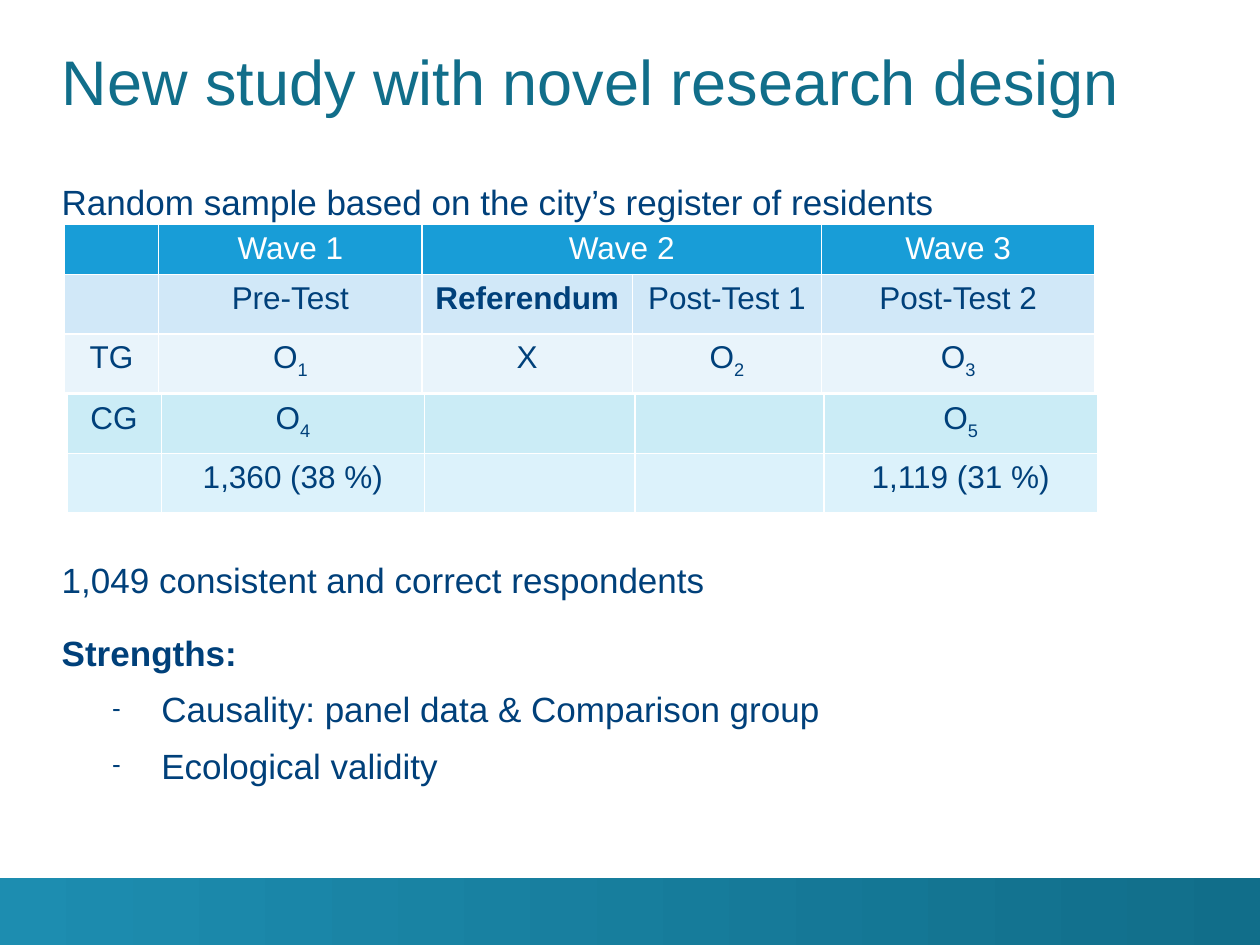
from lxml import etree
from pptx import Presentation
from pptx.dml.color import RGBColor
from pptx.enum.shapes import MSO_SHAPE
from pptx.enum.text import MSO_ANCHOR, PP_ALIGN
from pptx.oxml.ns import qn
from pptx.util import Inches, Pt

RECTANGLE = MSO_SHAPE.RECTANGLE
CENTER = PP_ALIGN.CENTER
BOTTOM = MSO_ANCHOR.BOTTOM

COLORS = {
    "title": "116E8A",
    "text": "00407A",
    "white": "FFFFFF",
    "band_start": "1D8DB0",
    "band_end": "116E8A",
    "header": "189DD7",
    "waves": "D1E8F8",
    "test_group": "E9F4FB",
    "control_group": "CBECF6",
    "response": "DCF2FB",
}
FONT = "Arial"
COLUMN_WIDTHS = [0.75, 2.09, 1.67, 1.5, 2.17]


def color(name):
    return RGBColor.from_string(COLORS[name])


def style(font, size, color_name, bold=False):
    font.name = FONT
    font.size = Pt(size)
    font.bold = bold
    font.color.rgb = color(color_name)


def add_text_frame(slide, left, top, width, height):
    box = slide.shapes.add_textbox(Inches(left), Inches(top), Inches(width), Inches(height))
    frame = box.text_frame
    frame.word_wrap = True
    frame.margin_left = frame.margin_right = frame.margin_top = frame.margin_bottom = 0
    return frame


def add_footer_band(slide, left, top, width, height):
    band = slide.shapes.add_shape(RECTANGLE, Inches(left), Inches(top), Inches(width), Inches(height))
    band.shadow.inherit = False
    band.line.fill.background()
    band.fill.gradient()
    band.fill.gradient_angle = 0
    for stop, name in zip(band.fill.gradient_stops, ("band_start", "band_end")):
        stop.color.rgb = color(name)


def add_title(slide, left, top, width, height):
    frame = add_text_frame(slide, left, top, width, height)
    frame.margin_left = Inches(0.5)
    frame.vertical_anchor = BOTTOM
    paragraph = frame.paragraphs[0]
    paragraph.text = "New study with novel research design"
    style(paragraph.font, 36, "title")


def add_lead(slide, left, top, width, height):
    paragraph = add_text_frame(slide, left, top, width, height).paragraphs[0]
    paragraph.text = "Random sample based on the city’s register of residents"
    style(paragraph.font, 20, "text")


def add_dash_bullet(paragraph):
    properties = paragraph._p.get_or_add_pPr()
    properties.set("marL", str(Inches(0.79)))
    properties.set("indent", str(Inches(-0.39)))
    etree.SubElement(properties, qn("a:buSzPct")).set("val", "75000")
    etree.SubElement(properties, qn("a:buFont")).set("typeface", FONT)
    etree.SubElement(properties, qn("a:buChar")).set("char", "-")


def add_findings(slide, left, top, width, height):
    frame = add_text_frame(slide, left, top, width, height)
    # Text, bold, bullet, line spacing
    lines = [
        ("1,049 consistent and correct respondents", False, False, 1.0),
        ("Strengths:", True, False, 1.5),
        ("Causality: panel data & Comparison group", False, True, 1.1),
        ("Ecological validity", False, True, 1.1),
    ]
    for index, (text, bold, bullet, spacing) in enumerate(lines):
        paragraph = frame.add_paragraph() if index else frame.paragraphs[0]
        paragraph.text = text
        paragraph.line_spacing = spacing
        if index:
            paragraph.space_before = Pt(5.8)
        if bullet:
            paragraph.level = 1
            add_dash_bullet(paragraph)
        style(paragraph.font, 20, "text", bold)


def add_borders(cell):
    properties = cell._tc.get_or_add_tcPr()
    for side in ("lnL", "lnR", "lnT", "lnB"):
        line = etree.SubElement(properties, qn(f"a:{side}"), w=str(Pt(1)))
        fill = etree.SubElement(line, qn("a:solidFill"))
        etree.SubElement(fill, qn("a:srgbClr"), val=COLORS["white"])


def fill_cell(cell, text, fill_name, text_color):
    add_borders(cell)
    cell.fill.solid()
    cell.fill.fore_color.rgb = color(fill_name)
    paragraph = cell.text_frame.paragraphs[0]
    paragraph.alignment = CENTER
    style(paragraph.font, 18, text_color)
    # An underscore marks the start of a subscript
    base, _, subscript = text.partition("_")
    for part, offset in ((base, "0"), (subscript, "-25000")):
        if part:
            run = paragraph.add_run()
            run.text = part
            style(run.font, 18, text_color, part == "Referendum")
            run._r.get_or_add_rPr().set("baseline", offset)


def add_design_table(slide, left, top, rows):
    """Each row is its height, fill, text colour and cell texts."""
    height = sum(row[0] for row in rows)
    frame = slide.shapes.add_table(
        len(rows), len(COLUMN_WIDTHS), Inches(left), Inches(top),
        Inches(sum(COLUMN_WIDTHS)), Inches(height))
    table = frame.table
    table.first_row = table.horz_banding = False
    for column, width in zip(table.columns, COLUMN_WIDTHS):
        column.width = Inches(width)
    for row, (row_height, fill_name, text_color, texts) in zip(table.rows, rows):
        row.height = Inches(row_height)
        for cell, text in zip(row.cells, texts):
            fill_cell(cell, text, fill_name, text_color)
    return table


def main():
    presentation = Presentation()
    presentation.slide_width = Inches(10)
    presentation.slide_height = Inches(7.5)
    slide = presentation.slides.add_slide(presentation.slide_layouts[6])

    add_footer_band(slide, 0, 6.97, 10, 0.53)
    add_title(slide, -0.01, 0.22, 9.88, 0.72)
    add_lead(slide, 0.49, 1.43, 9, 0.32)
    add_findings(slide, 0.49, 4.43, 9, 2.4)

    # Waves and test group
    waves = add_design_table(slide, 0.51, 1.78, [
        (0.4, "header", "white", ["", "Wave 1", "Wave 2", "", "Wave 3"]),
        (0.47, "waves", "text", ["", "Pre-Test", "Referendum", "Post-Test 1", "Post-Test 2"]),
        (0.47, "test_group", "text", ["TG", "O_1", "X", "O_2", "O_3"]),
    ])
    waves.cell(0, 2).merge(waves.cell(0, 3))

    # Comparison group and response rates
    add_design_table(slide, 0.53, 3.13, [
        (0.47, "control_group", "text", ["CG", "O_4", "", "", "O_5"]),
        (0.47, "response", "text", ["", "1,360 (38 %)", "", "", "1,119 (31 %)"]),
    ])

    presentation.save("out.pptx")


if __name__ == "__main__":
    main()
